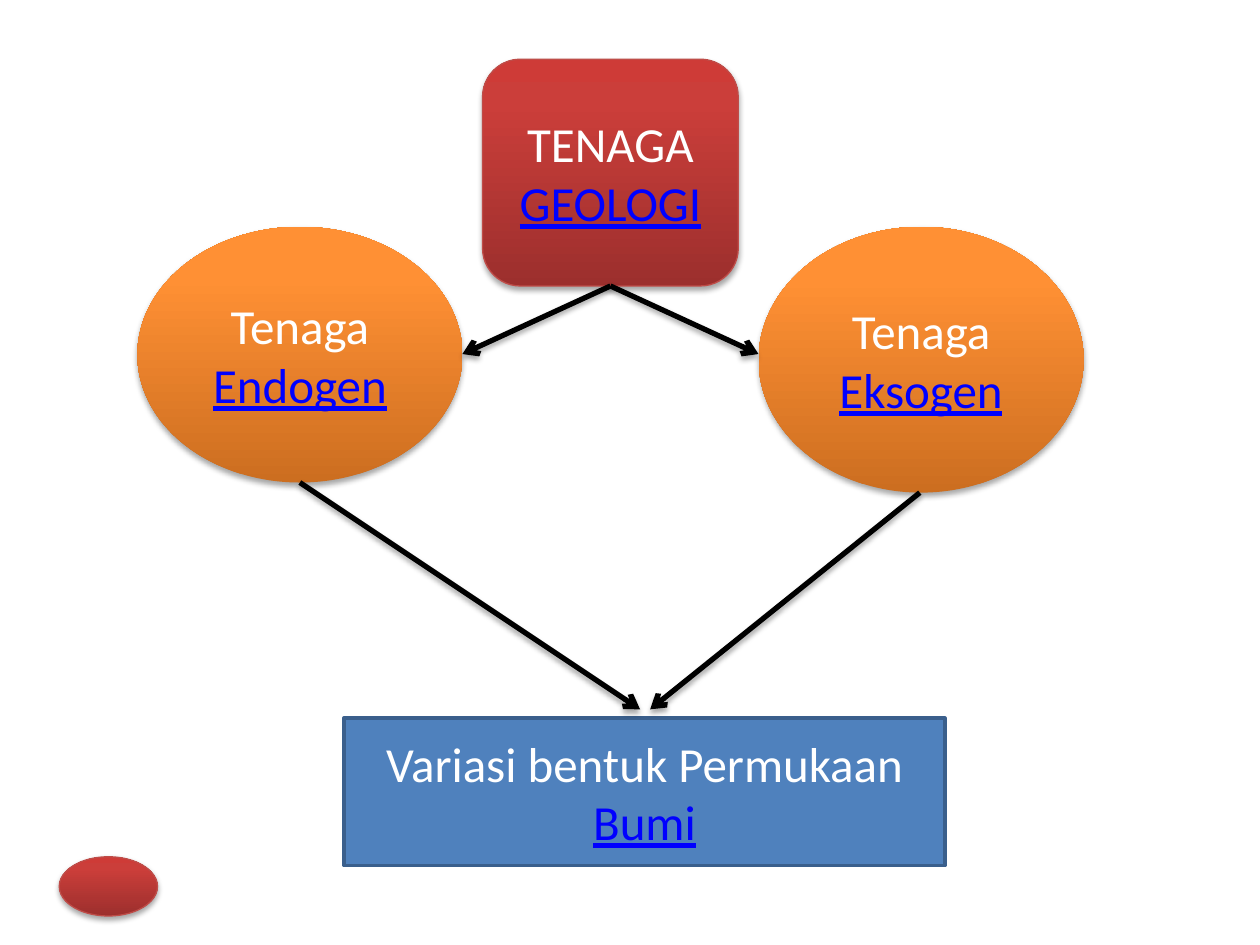
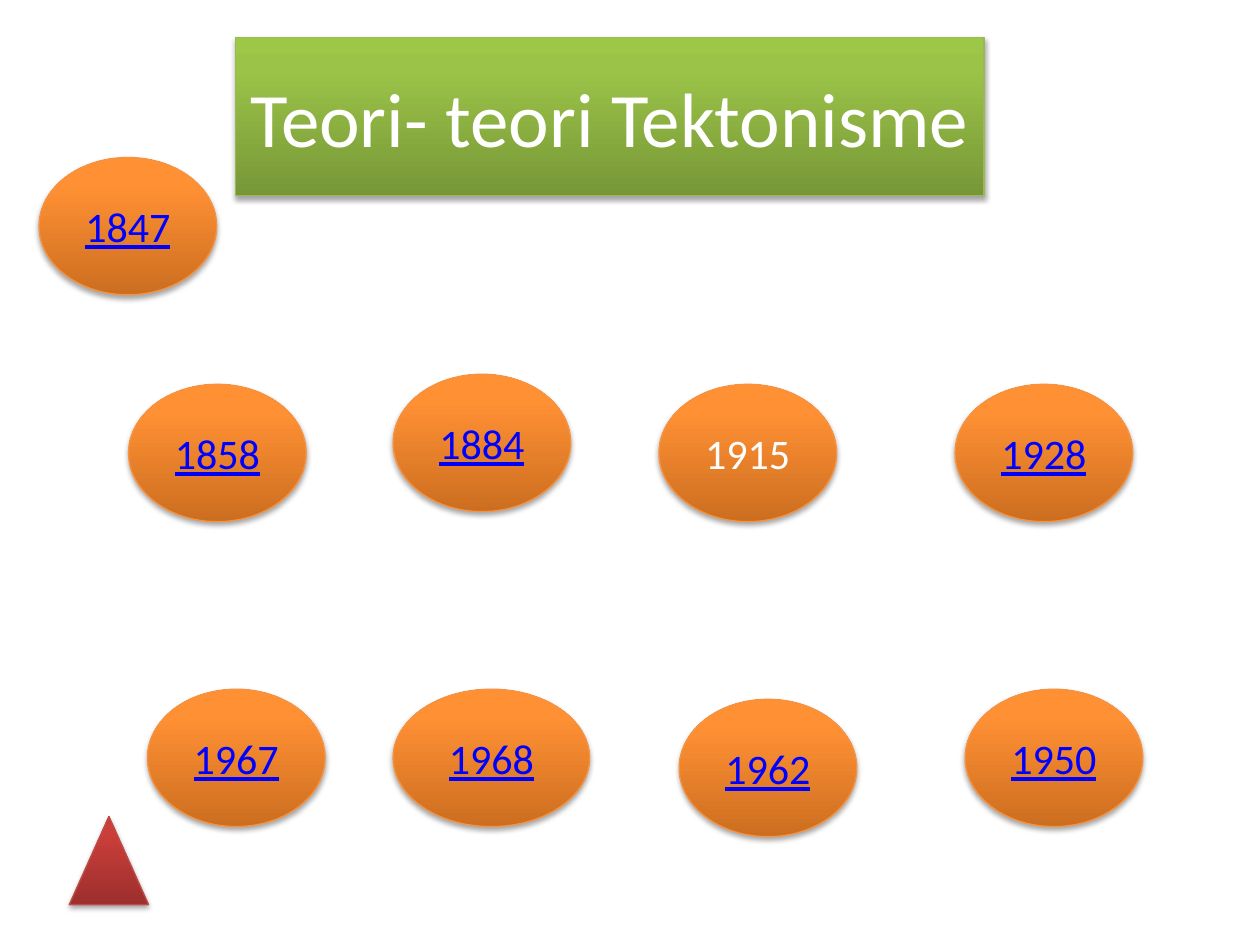
from copy import deepcopy

from lxml import etree
from pptx import Presentation
from pptx import util as u
from pptx.dml.color import RGBColor
from pptx.enum import shapes, text
from pptx.oxml import ns

PX = u.Inches(1) // 100  # one px is a hundredth of an inch
FONT = "Calibri"

WHITE = RGBColor(0xFF, 0xFF, 0xFF)
BLACK = RGBColor(0x00, 0x00, 0x00)
LINK_BLUE = RGBColor(0x00, 0x00, 0xFF)
BLUE = RGBColor(0x4F, 0x81, 0xBD)
BLUE_EDGE = RGBColor(0x3A, 0x5F, 0x8C)
ORANGE_EDGE = RGBColor(0xF6, 0x92, 0x40)
RED_EDGE = RGBColor(0xBF, 0x4C, 0x48)
GREEN_EDGE = RGBColor(0x98, 0xB9, 0x55)

# Gradient colours from the bottom to the top of a shape
STOPS = (0, 0.8, 1)
ORANGE = (RGBColor(0xCC, 0x6E, 0x20), RGBColor(0xFF, 0x90, 0x34), RGBColor(0xFF, 0x91, 0x36))
RED = (RGBColor(0x9C, 0x2F, 0x2D), RGBColor(0xCB, 0x3E, 0x3A), RGBColor(0xCE, 0x3B, 0x37))
GREEN = (RGBColor(0x77, 0x97, 0x37), RGBColor(0x9B, 0xC3, 0x48), RGBColor(0x9D, 0xC7, 0x46))

KIND = shapes.MSO_SHAPE
TITLE_ONLY, BLANK = 5, 6


class Deck:
    def __init__(self):
        self.prs = Presentation()
        self.prs.slide_width, self.prs.slide_height = 1000 * PX, 750 * PX
        self.slide = None

    def new_slide(self, layout):
        self.slide = self.prs.slides.add_slide(self.prs.slide_layouts[layout])

    def shadow(self, element):
        """Give a shape or connector element the soft shadow below it."""
        props = element.spPr
        effects = props.find(ns.qn("a:effectLst"))
        if effects is None:
            effects = etree.SubElement(props, ns.qn("a:effectLst"))
        outer = etree.SubElement(effects, ns.qn("a:outerShdw"), blurRad="40000",
                                 dist="23000", dir="5400000", rotWithShape="0")
        colour = etree.SubElement(outer, ns.qn("a:srgbClr"), val=str(BLACK))
        etree.SubElement(colour, ns.qn("a:alpha"), val="35000")

    def gradient(self, shape, colours):
        shape.fill.gradient()
        shape.fill.gradient_angle = 90
        stop_list = shape._element.spPr.find(".//" + ns.qn("a:gsLst"))
        stop_list.append(deepcopy(stop_list[-1]))
        for stop, position, colour in zip(shape.fill.gradient_stops, STOPS, colours):
            stop.position = position
            stop.color.rgb = colour

    def style(self, shape, fill, edge=None, weight=0.75):
        """A tuple of colours makes a shadowed gradient, one colour a flat fill."""
        shape.shadow.inherit = False
        if edge is None:
            shape.line.fill.background()
        else:
            shape.line.color.rgb = edge
            shape.line.width = u.Pt(weight)
        if isinstance(fill, RGBColor):
            shape.fill.solid()
            shape.fill.fore_color.rgb = fill
        else:
            self.gradient(shape, fill)
            self.shadow(shape._element)

    def label(self, shape, size, plain="", linked=""):
        frame = shape.text_frame
        frame.word_wrap = True
        frame.vertical_anchor = text.MSO_ANCHOR.MIDDLE
        paragraph = frame.paragraphs[0]
        paragraph.alignment = text.PP_ALIGN.CENTER
        for words, colour in ((plain, WHITE), (linked, LINK_BLUE)):
            if words:
                run = paragraph.add_run()
                run.text = words
                run.font.name, run.font.size = FONT, u.Pt(size)
                run.font.color.rgb = colour
                if colour == LINK_BLUE:
                    run.font.underline = True

    def box(self, kind, place, fill, edge=None, weight=0.75, size=28, plain="", linked=""):
        shape = self.slide.shapes.add_shape(kind, *(n * PX for n in place))
        self.style(shape, fill, edge, weight)
        self.label(shape, size, plain, linked)
        return shape

    def title(self, words, place):
        heading = self.slide.shapes.title
        heading.left, heading.top, heading.width, heading.height = (n * PX for n in place)
        self.style(heading, GREEN, GREEN_EDGE)
        self.label(heading, 44, words)

    def arrow(self, start, end, source=None):
        """Draw an arrow, joined to the bottom of source if given."""
        link = self.slide.shapes.add_connector(
            shapes.MSO_CONNECTOR.STRAIGHT, *(n * PX for n in start + end))
        if source is not None:
            link.begin_connect(source, 2)
        link.line.color.rgb = BLACK
        link.line.width = u.Pt(3)
        stroke = link._element.spPr.find(ns.qn("a:ln"))
        etree.SubElement(stroke, ns.qn("a:tailEnd"), type="arrow")
        self.shadow(link._element)


def forces_slide(deck):
    deck.new_slide(BLANK)
    deck.box(KIND.RECTANGLE, (273, 570, 477, 117), BLUE, BLUE_EDGE, 2,
             plain="Variasi bentuk Permukaan ", linked="Bumi")
    deck.box(KIND.OVAL, (109, 180, 258, 203), ORANGE, plain="Tenaga ", linked="Endogen")
    deck.box(KIND.OVAL, (602, 180, 258, 211), ORANGE, plain="Tenaga ", linked="Eksogen")
    deck.arrow((730, 391), (516, 563))
    deck.arrow((238, 383), (508, 563))
    geology = deck.box(KIND.ROUNDED_RECTANGLE, (383, 47, 203, 180), RED, RED_EDGE,
                       plain="TENAGA ", linked="GEOLOGI")
    for tip in ((367, 281), (602, 281)):
        deck.arrow((484, 227), tip, geology)
    deck.box(KIND.OVAL, (47, 680, 78, 47), RED, RED_EDGE)


def theories_slide(deck):
    deck.new_slide(TITLE_ONLY)
    deck.title("Teori- teori Tektonisme", (187, 30, 594, 125))
    years = (("1847", 31, 125), ("1858", 102, 305), ("1884", 312, 297),
             ("1915", 523, 305), ("1928", 758, 305), ("1950", 766, 547),
             ("1962", 539, 555), ("1967", 117, 547), ("1968", 312, 547))
    for year, left, top in years:
        width = 156 if year == "1968" else 141
        caption = {"plain" if year == "1915" else "linked": year}
        deck.box(KIND.OVAL, (left, top, width, 109), ORANGE, ORANGE_EDGE, size=24, **caption)
    deck.box(KIND.ISOSCELES_TRIANGLE, (55, 648, 63, 70), RED, RED_EDGE)


def main():
    deck = Deck()
    forces_slide(deck)
    theories_slide(deck)
    deck.prs.save("out.pptx")


if __name__ == "__main__":
    main()
